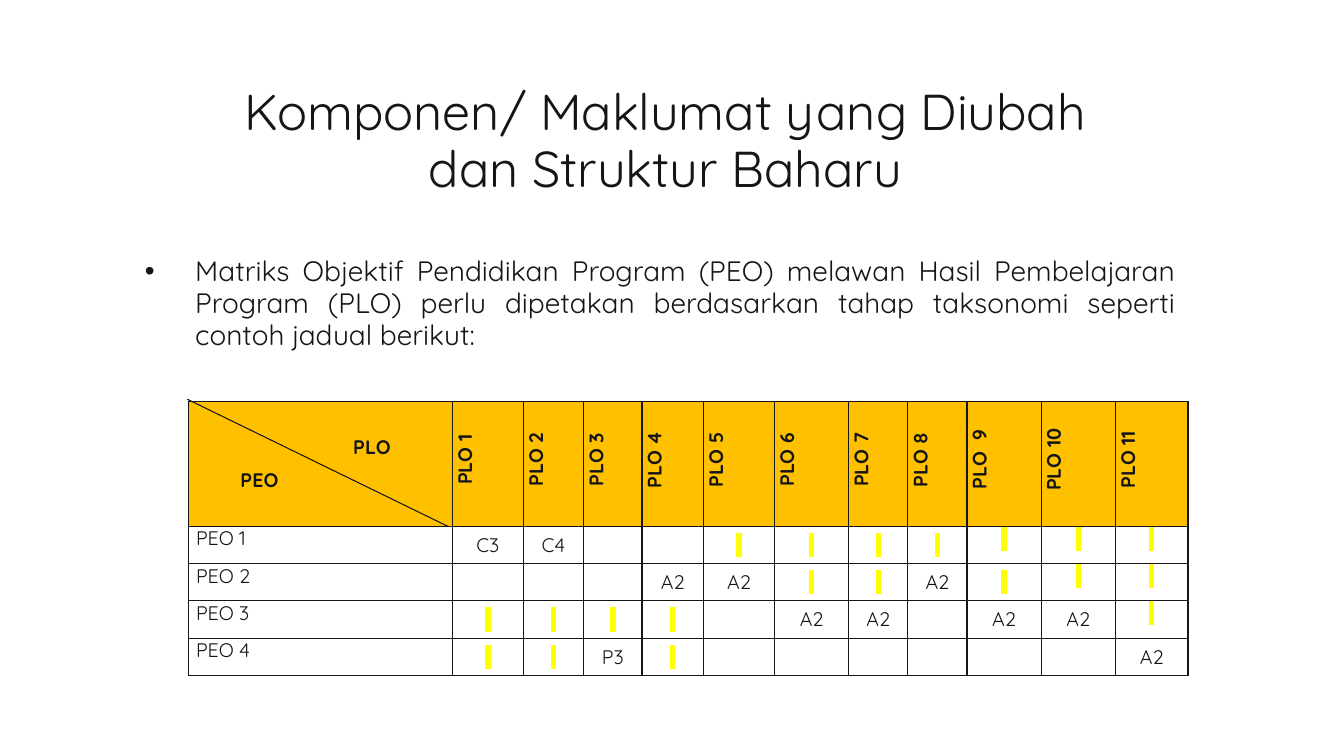
from dataclasses import dataclass

from lxml import etree
from pptx import Presentation
from pptx import util as u
from pptx.dml.color import RGBColor
from pptx.enum import shapes, text
from pptx.oxml import ns

COLOURS = {"ink": "141516", "header": "FFC000", "mark": "FFFF00"}
FONT = "Quicksand"
COLUMN_WIDTHS = (6.65, 1.79, 1.52, 1.47, 1.55, 1.79, 1.87, 1.49, 1.49, 1.87, 1.87, 1.83)
HEADER_HEIGHT, ROW_HEIGHT = 3.15, 0.94
OUTCOMES = [f"PLO {number}" for number in range(1, 9)] + ["PLO  9", "PLO 10", "PLO 11"]


@dataclass
class Objective:
    name: str
    levels: dict[int, str]
    middle_marks: tuple[int, ...] = ()
    top_marks: tuple[int, ...] = ()


OBJECTIVES = [
    Objective("PEO 1", {1: "C3", 2: "C4"}, (5, 6, 7, 8), (9, 10, 11)),
    Objective("PEO 2", {4: "A2", 5: "A2", 8: "A2"}, (6, 7, 9), (10, 11)),
    Objective("PEO 3", {6: "A2", 7: "A2", 9: "A2", 10: "A2"}, (1, 2, 3, 4), (11,)),
    Objective("PEO 4", {3: "P3", 11: "A2"}, (1, 2, 4)),
]


def colour(name: str) -> RGBColor:
    return RGBColor.from_string(COLOURS[name])


def add_element(parent, tag: str, **attributes: str):
    return etree.SubElement(parent, ns.qn(tag), **attributes)


def format_paragraph(paragraph, size: float, align, bold: bool = False) -> None:
    paragraph.alignment = align
    for run in paragraph.runs:
        run.font.size = u.Pt(size)
        run.font.bold = bold
        run.font.color.rgb = colour("ink")
        run.font.name = FONT


def indent(paragraph, left: float, first: float = 0) -> None:
    properties = paragraph._p.get_or_add_pPr()
    properties.set("marL", str(u.Cm(left)))
    properties.set("indent", str(u.Cm(first)))


def highlight(run) -> None:
    mark = etree.Element(ns.qn("a:highlight"))
    add_element(mark, "a:srgbClr", val=COLOURS["mark"])
    run.font._element.find(ns.qn("a:latin")).addprevious(mark)


def style_cell(cell, fill: str | None = None) -> None:
    cell.margin_left = cell.margin_right = u.Cm(0.19)
    cell.margin_top = cell.margin_bottom = 0
    cell.vertical_anchor = text.MSO_ANCHOR.MIDDLE
    if fill:
        cell.fill.solid()
        cell.fill.fore_color.rgb = colour(fill)
    else:
        cell.fill.background()
    properties = cell._tc.get_or_add_tcPr()
    for position, side in enumerate(("a:lnL", "a:lnR", "a:lnT", "a:lnB")):
        border = etree.Element(ns.qn(side), w=str(u.Pt(1)))
        solid = add_element(border, "a:solidFill")
        add_element(solid, "a:srgbClr", val=COLOURS["ink"])
        properties.insert(position, border)


def write_cell(cell, words: str, align, bold: bool = False) -> None:
    cell.text_frame.text = words
    for paragraph in cell.text_frame.paragraphs:
        format_paragraph(paragraph, 14, align, bold)


def add_title(slide) -> None:
    title = slide.shapes.title
    title.left, title.top, title.width, title.height = u.Cm(1.7), u.Cm(1.98), u.Cm(30.48), u.Cm(3.18)
    title.text_frame.text = "Komponen/ Maklumat yang Diubah \vdan Struktur Baharu "
    title.text_frame.vertical_anchor = text.MSO_ANCHOR.MIDDLE
    heading = title.text_frame.paragraphs[0]
    heading.line_spacing = 0.95
    format_paragraph(heading, 36, text.PP_ALIGN.CENTER)


def add_explanation(slide) -> None:
    frame = slide.shapes.add_textbox(u.Cm(3.4), u.Cm(6.32), u.Cm(26.47), u.Cm(3)).text_frame
    frame.word_wrap = True
    frame.text = (
        "Matriks Objektif Pendidikan Program (PEO) melawan Hasil Pembelajaran Program (PLO) "
        "perlu dipetakan berdasarkan tahap taksonomi seperti contoh jadual berikut:"
    )
    explanation = frame.paragraphs[0]
    indent(explanation, 1.27, -1.27)
    explanation.line_spacing = 0.95
    properties = explanation._p.get_or_add_pPr()
    add_element(properties, "a:buFont", typeface="Arial")
    add_element(properties, "a:buChar", char="•")
    format_paragraph(explanation, 20, text.PP_ALIGN.JUSTIFY)


def add_header(matrix) -> None:
    corner = matrix.cell(0, 0)
    style_cell(corner, "header")
    write_cell(corner, "PLO\nPEO", text.PP_ALIGN.LEFT, True)
    plo, peo = corner.text_frame.paragraphs
    plo.alignment = text.PP_ALIGN.CENTER
    indent(plo, 2.6)
    indent(peo, 1.12)
    plo.space_after = peo.space_after = u.Pt(6)
    for column, outcome in enumerate(OUTCOMES, 1):
        cell = matrix.cell(0, column)
        style_cell(cell, "header")
        write_cell(cell, outcome, text.PP_ALIGN.CENTER, True)
        indent(cell.text_frame.paragraphs[0], 0.2)
        cell._tc.get_or_add_tcPr().set("vert", "vert270")


def add_objective(matrix, row: int, objective: Objective) -> None:
    name = matrix.cell(row, 0)
    style_cell(name)
    write_cell(name, objective.name, text.PP_ALIGN.LEFT)
    name.vertical_anchor = text.MSO_ANCHOR.TOP
    for column in range(1, len(COLUMN_WIDTHS)):
        cell = matrix.cell(row, column)
        style_cell(cell)
        if column in objective.levels:
            write_cell(cell, objective.levels[column], text.PP_ALIGN.CENTER)
        elif column in objective.middle_marks + objective.top_marks:
            write_cell(cell, " ", text.PP_ALIGN.CENTER)
            highlight(cell.text_frame.paragraphs[0].runs[0])
            if column in objective.top_marks:
                cell.vertical_anchor = text.MSO_ANCHOR.TOP


def add_matrix(slide) -> None:
    heights = [HEADER_HEIGHT] + [ROW_HEIGHT] * len(OBJECTIVES)
    matrix = slide.shapes.add_table(
        len(heights), len(COLUMN_WIDTHS),
        u.Cm(4.75), u.Cm(10.11), u.Cm(sum(COLUMN_WIDTHS)), u.Cm(sum(heights)),
    ).table
    matrix.first_row = matrix.horz_banding = False
    for column, width in zip(matrix.columns, COLUMN_WIDTHS):
        column.width = u.Cm(width)
    for row, height in zip(matrix.rows, heights):
        row.height = u.Cm(height)
    add_header(matrix)
    for row, objective in enumerate(OBJECTIVES, 1):
        add_objective(matrix, row, objective)


def add_diagonal(slide) -> None:
    diagonal = slide.shapes.add_connector(
        shapes.MSO_CONNECTOR.STRAIGHT, u.Cm(4.72), u.Cm(10.06), u.Cm(11.28), u.Cm(13.26)
    )
    diagonal.line.color.rgb = colour("ink")
    diagonal.line.width = u.Pt(0.75)
    add_element(diagonal._element.spPr, "a:effectLst")


def main() -> None:
    presentation = Presentation()
    presentation.slide_width, presentation.slide_height = u.Cm(33.87), u.Cm(19.05)
    slide = presentation.slides.add_slide(presentation.slide_layouts[5])
    add_title(slide)
    add_explanation(slide)
    add_matrix(slide)
    add_diagonal(slide)
    presentation.save("out.pptx")


if __name__ == "__main__":
    main()
